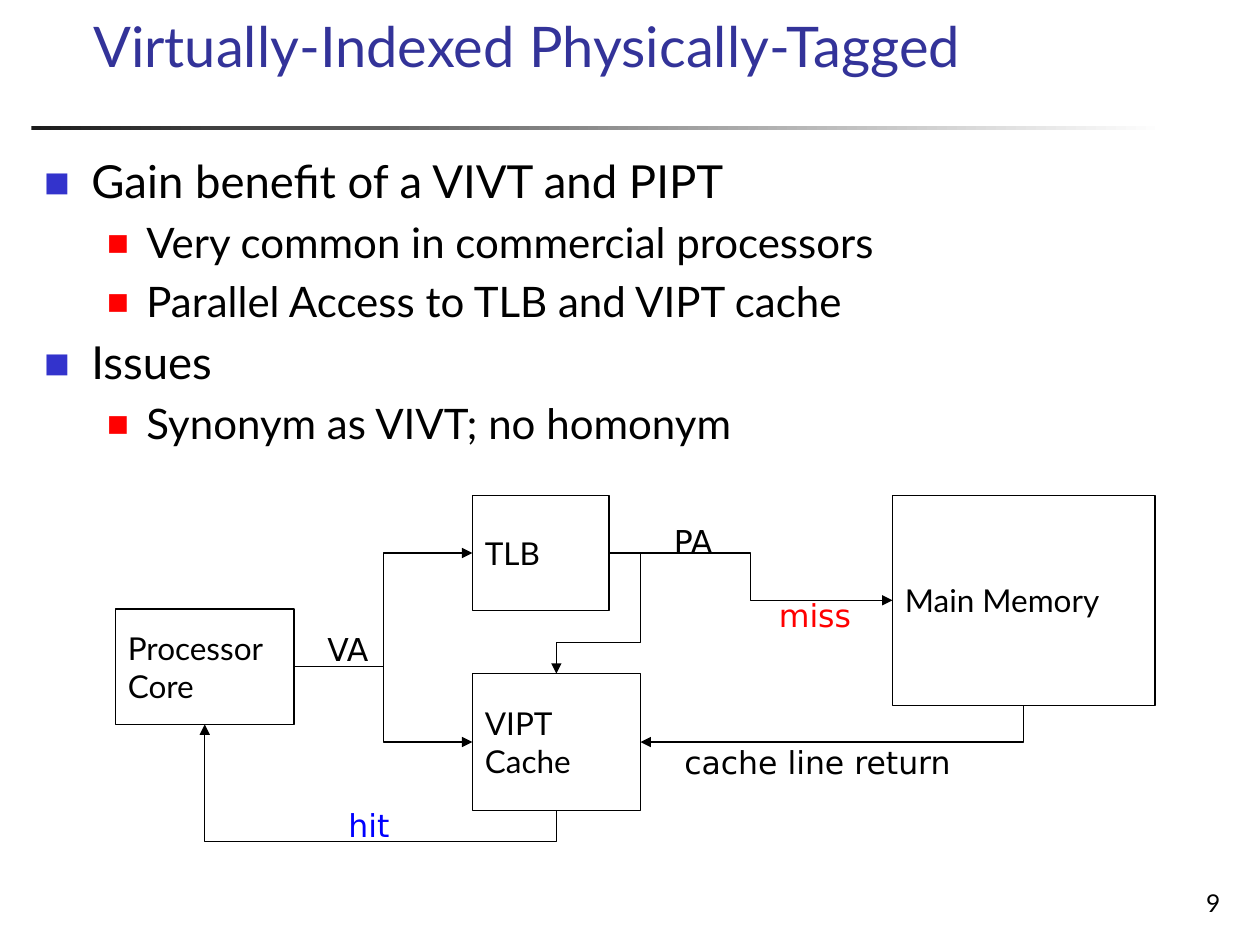
from lxml.etree import SubElement
from pptx import Presentation
from pptx.dml.color import RGBColor
from pptx.enum.shapes import MSO_CONNECTOR as LINK, MSO_SHAPE as SHAPE
from pptx.enum.text import MSO_ANCHOR as ANCHOR, MSO_AUTO_SIZE as FIT, PP_ALIGN as ALIGN
from pptx.oxml.ns import qn
from pptx.util import Pt

COLORS = {"title": "333399", "text": "000000", "paper": "FFFFFF", "rule": "1C1C1C",
          "bullet": "3333CC", "subbullet": "FF0000", "hit": "0000FF", "miss": "FF0000"}
TOP, LEFT, BOTTOM, RIGHT = range(4)


def rgb(name):
    return RGBColor.from_string(COLORS[name])


def write(shape, text, size, color="text", face="Lato", anchor=ANCHOR.TOP, align=ALIGN.LEFT):
    frame = shape.text_frame
    frame.text = text
    frame.word_wrap = True
    frame.auto_size = FIT.NONE
    frame.vertical_anchor = anchor
    for paragraph in frame.paragraphs:
        paragraph.alignment = align
        paragraph.font.name = face
        paragraph.font.size = Pt(size)
        paragraph.font.color.rgb = rgb(color)


deck = Presentation()
deck.slide_width, deck.slide_height = Pt(720), Pt(540)
slide = deck.slides.add_slide(deck.slide_layouts[1])
shapes = slide.shapes

rule = shapes.add_shape(SHAPE.RECTANGLE, Pt(18), Pt(72), Pt(648), Pt(2.2))
rule.shadow.inherit = False
rule.line.fill.background()
rule.fill.gradient()
rule.fill.gradient_angle = 0
for stop, color in zip(rule.fill.gradient_stops, ("rule", "paper")):
    stop.color.rgb = rgb(color)

title, points = slide.placeholders
title.left, title.top, title.width, title.height = Pt(46), Pt(11), Pt(638), Pt(37.5)
write(title, "Virtually-Indexed Physically-Tagged", 32, "title", anchor=ANCHOR.BOTTOM)

points.left, points.top, points.width, points.height = Pt(18), Pt(84), Pt(687), Pt(399)
outline = [
    (0, "Gain benefit of a VIVT and PIPT"),
    (1, "Very common in commercial processors"),
    (1, "Parallel Access to TLB and VIPT cache"),
    (0, "Issues"),
    (1, "Synonym as VIVT; no homonym"),
]
levels = [(26, 27, 27, "bullet", 60), (24, 58.5, 22.5, "subbullet", 55)]
write(points, "\n".join(text for _, text in outline), 26)
for paragraph, (level, _) in zip(points.text_frame.paragraphs, outline):
    size, margin, hanging, color, percent = levels[level]
    paragraph.level = level
    paragraph.font.size = Pt(size)
    props = paragraph._p.get_or_add_pPr()
    props.set("marL", str(Pt(margin)))
    props.set("indent", str(-Pt(hanging)))
    bullet_color = SubElement(props, qn("a:buClr"))
    SubElement(bullet_color, qn("a:srgbClr"), val=COLORS[color])
    SubElement(props, qn("a:buSzPct"), val=str(percent * 1000))
    SubElement(props, qn("a:buFont"), typeface="Lato")
    SubElement(props, qn("a:buChar"), char="■")
    props.append(props.find(qn("a:defRPr")))

page = shapes.add_textbox(Pt(554.5), Pt(492), Pt(150), Pt(36))
write(page, "9", 14, anchor=ANCHOR.BOTTOM, align=ALIGN.RIGHT)

units = {}
for text, x, y, width, height in [
    ("TLB", 270, 283, 78, 66),
    ("Processor\nCore", 66, 348, 102, 66),
    ("VIPT\nCache", 270, 385, 96, 78),
    ("Main Memory", 510, 283, 150, 120),
]:
    unit = shapes.add_shape(SHAPE.RECTANGLE, Pt(x), Pt(y), Pt(width), Pt(height))
    unit.shadow.inherit = False
    unit.fill.solid()
    unit.fill.fore_color.rgb = rgb("paper")
    unit.line.color.rgb = rgb("text")
    unit.line.width = Pt(0.75)
    write(unit, text, 18, anchor=ANCHOR.MIDDLE)
    units[text.split()[0]] = unit

for text, x, y, width, color in [
    ("VA", 180, 356.5, 43, "text"),
    ("hit", 192, 457, 42, "hit"),
    ("miss", 438, 337, 61, "miss"),
    ("cache line return", 384, 421, 186, "text"),
    ("PA", 378, 295, 42, "text"),
]:
    label = shapes.add_textbox(Pt(x), Pt(y), Pt(width), Pt(29))
    write(label, text, 18, color, "DejaVu Sans")

for start, start_side, end, end_side, bends, adjusts, turn in [
    ("Processor", RIGHT, "TLB", LEFT, 3, [50000], 0),
    ("Processor", RIGHT, "VIPT", LEFT, 3, [50000], 0),
    ("TLB", RIGHT, "VIPT", TOP, 4, [-60000, 73900], 0),
    ("VIPT", BOTTOM, "Processor", BOTTOM, 3, [-36500], -1),
    ("TLB", RIGHT, "Main", LEFT, 3, [50000], 0),
    ("Main", BOTTOM, "VIPT", RIGHT, 2, [], 1),
]:
    route = shapes.add_connector(LINK.ELBOW, 0, 0, 0, 0)
    route.begin_connect(units[start], start_side)
    route.end_connect(units[end], end_side)
    if turn:
        x1, y1, x2, y2 = route.begin_x, route.begin_y, route.end_x, route.end_y
        mid_x, mid_y = (x1 + x2) // 2, (y1 + y2) // 2
        route.begin_x, route.begin_y = mid_x + turn * (y1 - mid_y), mid_y - turn * (x1 - mid_x)
        route.end_x, route.end_y = mid_x + turn * (y2 - mid_y), mid_y - turn * (x2 - mid_x)
        route.rotation = turn * 90 % 360
    route.line.color.rgb = rgb("text")
    route.line.width = Pt(0.75)
    props = route._element.spPr
    SubElement(props.find(qn("a:ln")), qn("a:tailEnd"), type="triangle")
    SubElement(props, qn("a:effectLst"))
    geometry = props.find(qn("a:prstGeom"))
    geometry.set("prst", f"bentConnector{bends}")
    guides = geometry.find(qn("a:avLst"))
    for number, value in enumerate(adjusts, 1):
        name = "adj" if bends == 2 else f"adj{number}"
        SubElement(guides, qn("a:gd"), name=name, fmla=f"val {value}")

deck.save("out.pptx")
